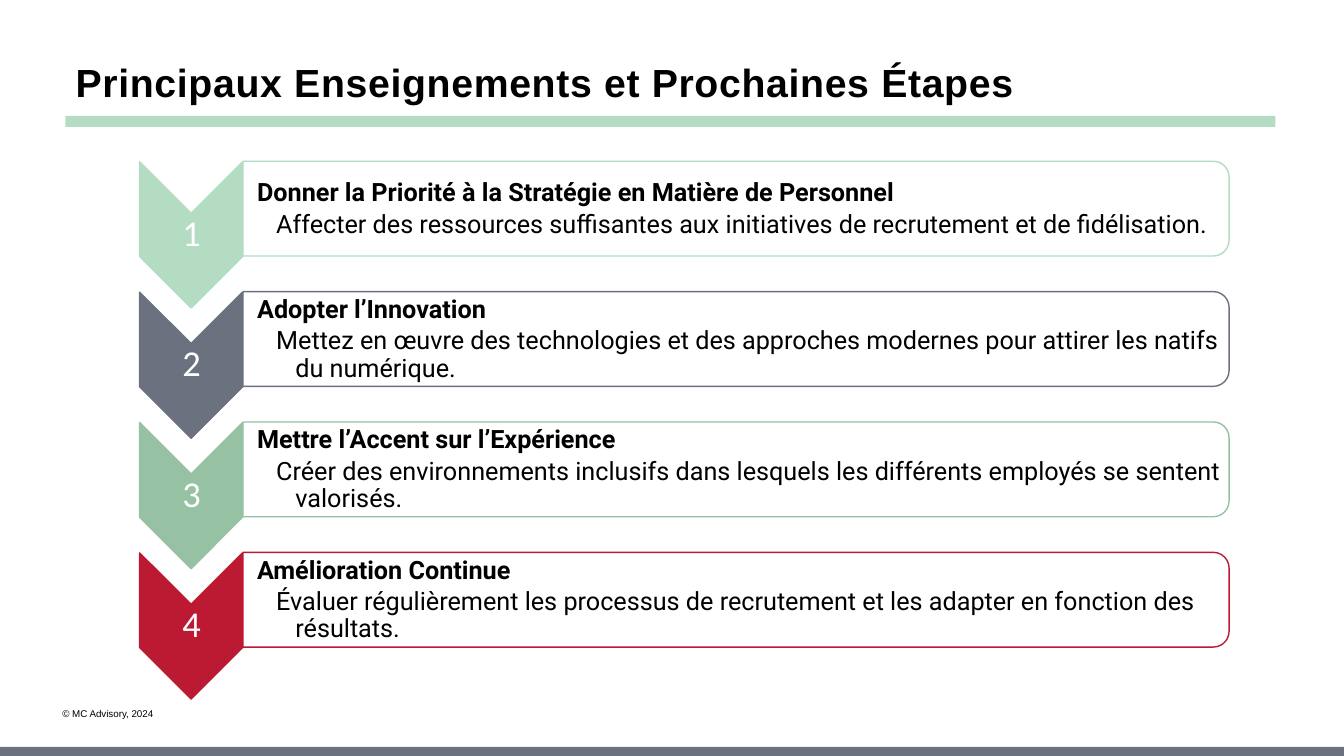
from lxml.etree import SubElement
from pptx import Presentation
from pptx.dml.color import RGBColor
from pptx.enum.shapes import MSO_SHAPE as Shape
from pptx.enum.text import MSO_ANCHOR as Anchor, PP_ALIGN as Align
from pptx.oxml.ns import qn
from pptx.util import Inches, Pt

COLORS = {
    "mint": "B3DCC3",
    "slate": "6B717E",
    "sage": "96C1A3",
    "crimson": "BC1932",
    "white": "FFFFFF",
    "black": "000000",
}
STEPS = [
    ("mint", "Donner la Priorité à la Stratégie en Matière de Personnel",
     "Affecter des ressources suffisantes aux initiatives de recrutement et de fidélisation."),
    ("slate", "Adopter l’Innovation",
     "Mettez en œuvre des technologies et des approches modernes pour attirer les natifs du numérique."),
    ("sage", "Mettre l’Accent sur l’Expérience",
     "Créer des environnements inclusifs dans lesquels les différents employés se sentent valorisés."),
    ("crimson", "Amélioration Continue",
     "Évaluer régulièrement les processus de recrutement et les adapter en fonction des résultats."),
]
FIRST_TOP, LAST_TOP = 1.65, 5.53


class SlideBuilder:
    """Holds the colours and the slide being built."""

    def __init__(self, slide, colors):
        """Keep the slide and the palette."""
        self.slide = slide
        self.colors = colors

    def color(self, name):
        """Return a palette colour."""
        return RGBColor.from_string(self.colors[name])

    def run(self, paragraph, text, font, size, color="black", bold=False):
        """Add one formatted run to a paragraph."""
        run = paragraph.add_run()
        run.text = text
        run.font.name = font
        run.font.size = Pt(size)
        run.font.bold = bold
        run.font.color.rgb = self.color(color)
        return run

    def title(self, text, left, top, width, height):
        """Place and fill the title placeholder."""
        title = self.slide.shapes.title
        title.left, title.top = Inches(left), Inches(top)
        title.width, title.height = Inches(width), Inches(height)
        title.text_frame.vertical_anchor = Anchor.MIDDLE
        paragraph = title.text_frame.paragraphs[0]
        paragraph.alignment = Align.LEFT
        paragraph.line_spacing = 0.9
        run = self.run(paragraph, text, "Arial", 28, bold=True)
        run.font._element.set("spc", "50")

    def shape(self, kind, left, top, width, height, fill, line=None, rotation=0, opacity=100):
        """Add a filled preset shape, with a one-point outline if asked."""
        shape = self.slide.shapes.add_shape(
            kind, Inches(left), Inches(top), Inches(width), Inches(height))
        shape.shadow.inherit = False
        shape.rotation = rotation
        shape.fill.solid()
        shape.fill.fore_color.rgb = self.color(fill)
        if opacity < 100:
            fill_color = shape._element.spPr.find(qn("a:solidFill"))[0]
            SubElement(fill_color, qn("a:alpha"), val=str(opacity * 1000))
        if line:
            shape.line.color.rgb = self.color(line)
            shape.line.width = Pt(1)
        else:
            shape.line.fill.background()

    def text_frame(self, left, top, width, height, insets, anchor=Anchor.MIDDLE, wrap=True):
        """Add a text box and return its frame."""
        box = self.slide.shapes.add_textbox(
            Inches(left), Inches(top), Inches(width), Inches(height))
        frame = box.text_frame
        frame.word_wrap = wrap
        frame.vertical_anchor = anchor
        (frame.margin_left, frame.margin_top,
         frame.margin_right, frame.margin_bottom) = map(Inches, insets)
        return frame

    def step(self, number, top, color, heading, detail):
        """Add a numbered chevron and its panel."""
        self.shape(Shape.CHEVRON, 1.17, top + 0.17, 1.45, 1.02, color, color, 90)
        label = self.text_frame(1.39, top + 0.46, 1.02, 0.44, [0.02] * 4)
        paragraph = label.paragraphs[0]
        paragraph.alignment = Align.CENTER
        paragraph.line_spacing = 0.9
        self.run(paragraph, str(number), "Calibri", 26, "white")

        self.shape(Shape.ROUND_2_SAME_RECTANGLE, 6.83, top - 4.47, 0.94, 9.78,
                   "white", color, 90, 90)
        panel = self.text_frame(2.41, top, 9.74, 0.85, (0.14, 0.01, 0.01, 0.01))
        for level, text in enumerate((heading, detail), 1):
            paragraph = panel.paragraphs[0] if level == 1 else panel.add_paragraph()
            paragraph.level = level
            properties = paragraph._p.get_or_add_pPr()
            properties.set("marL", str(Inches(0.19 * level)))
            properties.set("indent", str(Inches(-0.19)))
            paragraph.line_spacing = 0.9
            paragraph.space_after = Pt(3)
            self.run(paragraph, text, "Roboto", 18, bold=level == 1)


def main():
    """Build and save the slide."""
    presentation = Presentation()
    presentation.slide_width = Inches(13.33)
    presentation.slide_height = Inches(7.5)
    slide = presentation.slides.add_slide(presentation.slide_layouts[5])
    builder = SlideBuilder(slide, COLORS)

    builder.shape(Shape.RECTANGLE, 0, 7.41, 13.33, 0.09, "slate")
    footer = builder.text_frame(0.52, 6.97, 1.13, 0.22, (0.1, 0.05, 0.1, 0.05),
                                Anchor.TOP, False)
    builder.run(footer.paragraphs[0], "© MC Advisory, 2024", "Arial", 7)
    builder.shape(Shape.RECTANGLE, 0.65, 1.15, 12, 0.11, "mint")
    builder.title("Principaux Enseignements et Prochaines Étapes", 0.65, 0.56, 12, 0.57)

    pitch = (LAST_TOP - FIRST_TOP) / (len(STEPS) - 1)
    for index, step in enumerate(STEPS):
        builder.step(index + 1, FIRST_TOP + index * pitch, *step)
    presentation.save("out.pptx")


if __name__ == "__main__":
    main()
